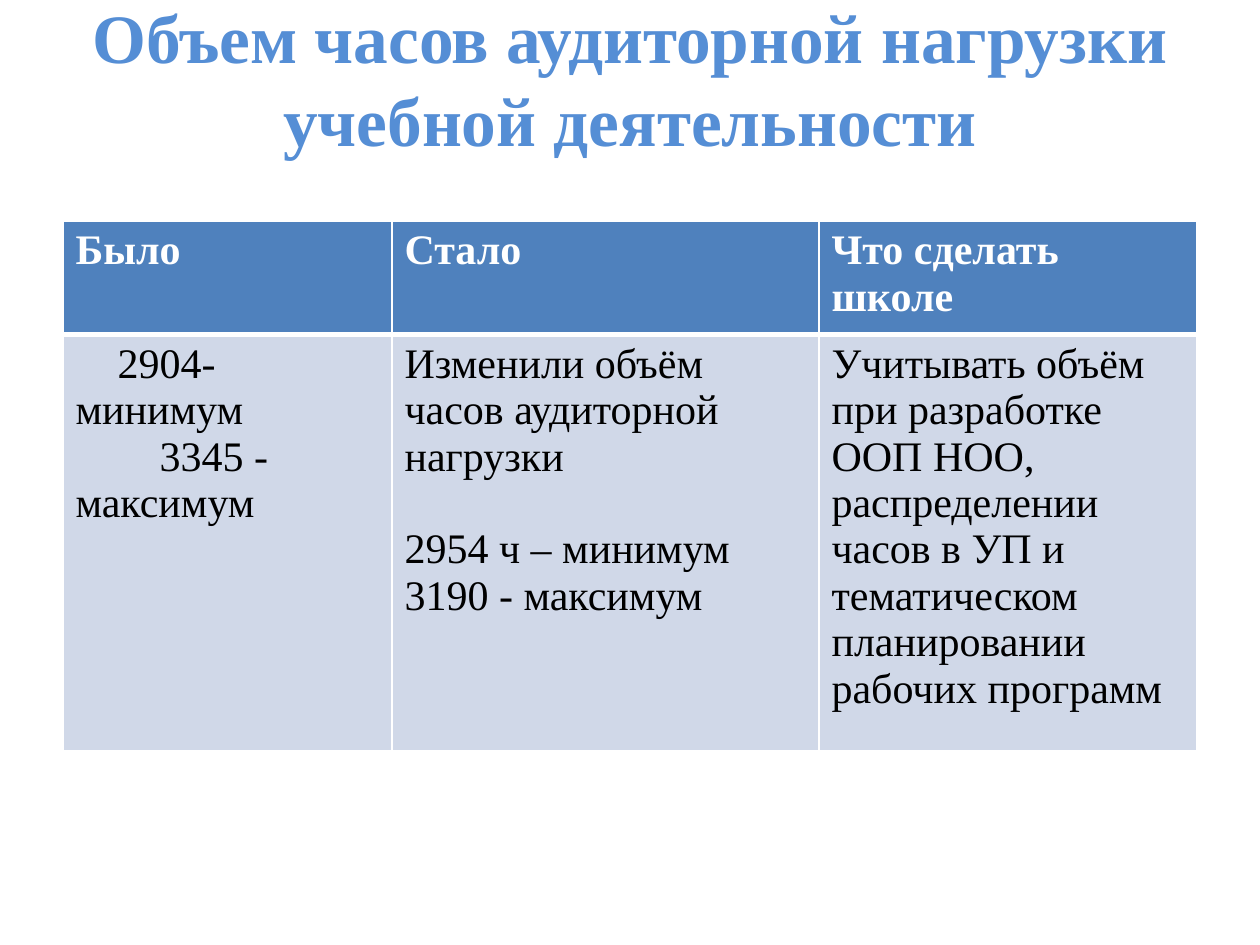
import pptx
import pptx.util
import pptx.dml.color
import pptx.enum.text
import pptx.oxml
import pptx.oxml.ns

PX = 914400 // 126
FONT = "Times New Roman"
COLORS = {"title": "558ED5", "header": "4F81BD", "body": "D0D8E8",
          "white": "FFFFFF", "black": "000000"}

TITLE = "Объем часов аудиторной нагрузки учебной деятельности"
HEADERS = ["Было", "Стало", "Что сделать школе"]
# Each paragraph: text, first-line indent in px, space before in points
BODY = [
    [("2904- минимум", 42, 0), ("3345 - максимум", 84, 0)],
    [("Изменили объём часов аудиторной нагрузки", 0, 0),
     ("2954 ч – минимум", 0, 26.5), ("3190 - максимум", 0, 0)],
    [("Учитывать объём при разработке ООП НОО, распределении часов в УП "
      "и тематическом планировании рабочих программ", 0, 0)],
]
ROWS = [[[(text, 0, 0)] for text in HEADERS], BODY]
STYLES = [("header", "white", True), ("body", "black", False)]
COL_WIDTHS = [329, 427, 378]
ROW_HEIGHTS = [104, 384]
LEFT, TABLE_TOP = 63, 221
TITLE_HEIGHT = 160


def px(n):
    return pptx.util.Emu(n * PX)


def rgb(name):
    return pptx.dml.color.RGBColor.from_string(COLORS[name])


def add_run(p, text, size, color, bold):
    r = p.add_run()
    r.text = text
    r.font.name = FONT
    r.font.size = pptx.util.Pt(size)
    r.font.bold = bold
    r.font.color.rgb = rgb(color)


def set_borders(cell, widths):
    """Draw white borders; widths maps a side (L, R, T, B) to points."""
    tcPr = cell._tc.get_or_add_tcPr()
    for i, (side, width) in enumerate(widths.items()):
        tcPr.insert(i, pptx.oxml.parse_xml(
            f'<a:ln{side} {pptx.oxml.ns.nsdecls("a")} w="{width * 12700}">'
            f'<a:solidFill><a:srgbClr val="{COLORS["white"]}"/></a:solidFill>'
            f'</a:ln{side}>'))


def fill_cell(cell, paragraphs, style):
    fill, color, bold = style
    cell.fill.solid()
    cell.fill.fore_color.rgb = rgb(fill)
    tf = cell.text_frame
    for i, (text, indent, before) in enumerate(paragraphs):
        p = tf.add_paragraph() if i else tf.paragraphs[0]
        if indent:
            p._p.get_or_add_pPr().set("indent", str(px(indent)))
        if before:
            p.space_before = pptx.util.Pt(before)
        add_run(p, text, 24, color, bold)


def add_title(s):
    sp = s.shapes.add_textbox(px(LEFT), 0, px(sum(COL_WIDTHS)), px(TITLE_HEIGHT))
    tf = sp.text_frame
    tf.word_wrap = True
    tf.margin_top = tf.margin_bottom = 0
    tf.vertical_anchor = pptx.enum.text.MSO_ANCHOR.BOTTOM
    p = tf.paragraphs[0]
    p.alignment = pptx.enum.text.PP_ALIGN.CENTER
    p.line_spacing = pptx.util.Pt(47.4)
    add_run(p, TITLE, 39.6, "title", True)


def add_hours_table(s):
    table = s.shapes.add_table(
        len(ROWS), len(COL_WIDTHS), px(LEFT), px(TABLE_TOP),
        px(sum(COL_WIDTHS)), px(sum(ROW_HEIGHTS))).table
    for col, width in zip(table.columns, COL_WIDTHS):
        col.width = px(width)
    for i, (cells, height) in enumerate(zip(ROWS, ROW_HEIGHTS)):
        table.rows[i].height = px(height)
        for j, paragraphs in enumerate(cells):
            cell = table.cell(i, j)
            fill_cell(cell, paragraphs, STYLES[i])
            set_borders(cell, {"L": 1, "R": 1, "T": 3 if i else 1,
                               "B": 1 if i else 3})


prs = pptx.Presentation()
prs.slide_width, prs.slide_height = px(1260), px(945)
s = prs.slides.add_slide(prs.slide_layouts[6])
add_title(s)
add_hours_table(s)
prs.save("out.pptx")
